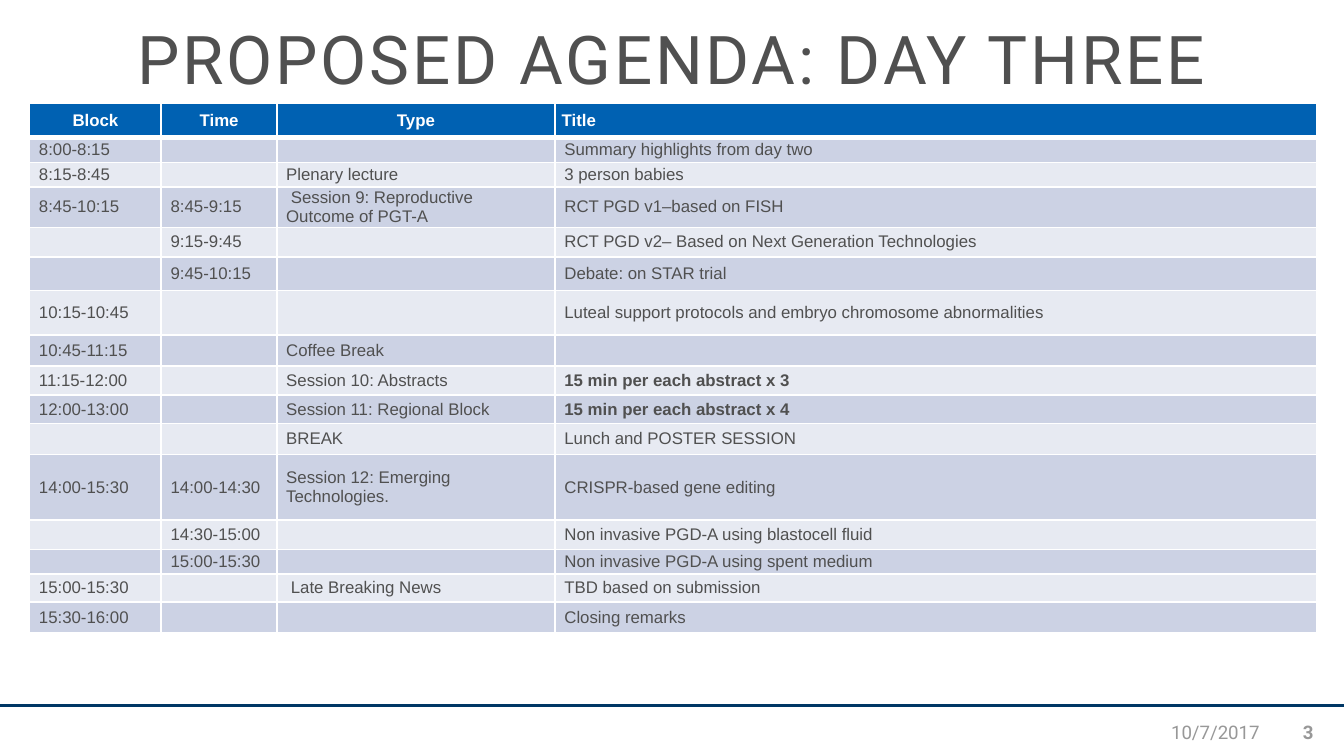
from lxml import etree
from pptx import Presentation
from pptx.dml.color import RGBColor
from pptx.enum.shapes import MSO_CONNECTOR
from pptx.enum.text import MSO_ANCHOR, PP_ALIGN
from pptx.oxml.ns import qn
from pptx.util import Inches, Pt

STRAIGHT = MSO_CONNECTOR.STRAIGHT
MIDDLE = MSO_ANCHOR.MIDDLE
LEFT, CENTER, RIGHT = PP_ALIGN.LEFT, PP_ALIGN.CENTER, PP_ALIGN.RIGHT

PAGE_WIDTH = Inches(10)
PAGE_HEIGHT = PAGE_WIDTH * 9 // 16

WHITE, GREY, PALE_GREY = "FFFFFF", "505050", "989898"
HEADER_BLUE, RULE_BLUE = "0061B2", "003765"
BANDS = ("CCD2E4", "E7EAF2")

COLUMN_WIDTHS = (0.98, 0.86, 2.07, 5.67)
HEADER_HEIGHT = 0.25
HEADINGS = ("Block", "Time", "Type", "Title")
SESSIONS = (
    (0.19, "8:00-8:15", "", "", "Summary highlights from day two"),
    (0.18, "8:15-8:45", "", "Plenary lecture", "3 person babies"),
    (0.3, "8:45-10:15", "8:45-9:15", " Session 9: Reproductive Outcome of PGT-A",
     "RCT PGD v1–based on FISH"),
    (0.22, "", "9:15-9:45", "", "RCT PGD v2– Based on Next Generation Technologies"),
    (0.25, "", "9:45-10:15", "", "Debate: on STAR trial"),
    (0.33, "10:15-10:45", "", "",
     "Luteal support protocols and embryo chromosome abnormalities"),
    (0.23, "10:45-11:15", "", "Coffee Break", ""),
    (0.22, "11:15-12:00", "", "Session 10: Abstracts", "15 min per each abstract x 3"),
    (0.21, "12:00-13:00", "", "Session 11: Regional Block", "15 min per each abstract x 4"),
    (0.23, "", "", "BREAK", "Lunch and POSTER SESSION"),
    (0.49, "14:00-15:30", "14:00-14:30", "Session 12: Emerging Technologies.",
     "CRISPR-based gene editing"),
    (0.22, "", "14:30-15:00", "", "Non invasive PGD-A using blastocell fluid"),
    (0.18, "", "15:00-15:30", "", "Non invasive PGD-A using spent medium"),
    (0.21, "15:00-15:30", "", " Late Breaking News", "TBD based on submission"),
    (0.23, "15:30-16:00", "", "", "Closing remarks"),
)


def rgb(value):
    """Return the colour for a hex string."""
    return RGBColor.from_string(value)


def set_attributes(target, values):
    """Set each named value on the target."""
    for name, value in values.items():
        setattr(target, name, value)


def write_text(frame, text, color, align=LEFT, **font_values):
    """Write one formatted paragraph and return its span."""
    para = frame.paragraphs[0]
    para.alignment = align
    span = para.add_run()
    span.text = text
    set_attributes(span.font, font_values)
    span.font.color.rgb = rgb(color)
    return span


def add_title(slide, text):
    """Place and format the title placeholder."""
    title = slide.shapes.title
    set_attributes(title, {"left": Inches(0.5), "top": Inches(0),
                           "width": Inches(9), "height": Inches(0.94)})
    frame = title.text_frame
    set_attributes(frame, {"vertical_anchor": MIDDLE, "word_wrap": True})
    span = write_text(frame, text, GREY, CENTER, name="Roboto", size=Pt(36))
    span.font._element.set("spc", "150")
    frame.paragraphs[0].line_spacing = 0.9


def add_footer_rule(slide):
    """Draw the line above the footer."""
    rule = slide.shapes.add_connector(
        STRAIGHT, Inches(0), Inches(5.25), PAGE_WIDTH, Inches(5.25))
    rule.line.color.rgb = rgb(RULE_BLUE)
    rule.line.width = Pt(2)
    etree.SubElement(rule._element.spPr, qn("a:effectLst"))


def add_footer_text(slide, text, left, width, align, bold=False):
    """Add one footer text box."""
    box = slide.shapes.add_textbox(
        Inches(left), Inches(5.3), Inches(width), Inches(0.3))
    set_attributes(box.text_frame, {"vertical_anchor": MIDDLE, "word_wrap": True})
    write_text(box.text_frame, text, PALE_GREY, align,
               name="Roboto", size=Pt(10), bold=bold)


def add_borders(cell, bottom):
    """Draw white borders, with the bottom width given in points."""
    properties = cell._tc.get_or_add_tcPr()
    for side, width in (("L", 1), ("R", 1), ("T", 1), ("B", bottom)):
        line = etree.SubElement(properties, qn(f"a:ln{side}"), w=str(Pt(width)))
        fill = etree.SubElement(line, qn("a:solidFill"))
        etree.SubElement(fill, qn("a:srgbClr"), val=WHITE)


def fill_cell(cell, text, fill, color, margins, bottom=1, align=LEFT, bold=False):
    """Write and format one table cell."""
    side, end = (Inches(margin) for margin in margins)
    set_attributes(cell, {"margin_left": side, "margin_right": side,
                          "margin_top": end, "margin_bottom": end,
                          "vertical_anchor": MIDDLE})
    add_borders(cell, bottom)
    cell.fill.solid()
    cell.fill.fore_color.rgb = rgb(fill)
    if text:
        write_text(cell.text_frame, text, color, align,
                   name="Arial", size=Pt(9), bold=bold)
    else:
        para = cell.text_frame.paragraphs[0]
        etree.SubElement(para._p, qn("a:endParaRPr"), sz="900")


def add_agenda(slide):
    """Add the agenda table with its header and banded sessions."""
    heights = [HEADER_HEIGHT] + [session[0] for session in SESSIONS]
    table = slide.shapes.add_table(
        len(heights), len(COLUMN_WIDTHS), Inches(0.22), Inches(0.77),
        Inches(sum(COLUMN_WIDTHS)), Inches(sum(heights))).table
    for column, width in zip(table.columns, COLUMN_WIDTHS):
        column.width = Inches(width)
    for row, height in zip(table.rows, heights):
        row.height = Inches(height)
    for index, heading in enumerate(HEADINGS):
        align = LEFT if heading == "Title" else CENTER
        fill_cell(table.cell(0, index), heading, HEADER_BLUE, WHITE,
                  (0.05, 0.05), 3, align, True)
    for number, session in enumerate(SESSIONS):
        for index, text in enumerate(session[1:]):
            fill_cell(table.cell(number + 1, index), text, BANDS[number % 2], GREY,
                      (0.07, 0), bold=text.startswith("15 min"))


def main():
    """Build the agenda slide and save it."""
    deck = Presentation()
    set_attributes(deck, {"slide_width": PAGE_WIDTH, "slide_height": PAGE_HEIGHT})
    page = deck.slides.add_slide(deck.slide_layouts[5])
    add_footer_rule(page)
    add_title(page, "PROPOSED AGENDA: DAY THREE")
    add_footer_text(page, "10/7/2017", 7.14, 2.33, RIGHT)
    add_footer_text(page, "3", 9.52, 0.43, CENTER, True)
    add_agenda(page)
    deck.save("out.pptx")


if __name__ == "__main__":
    main()
